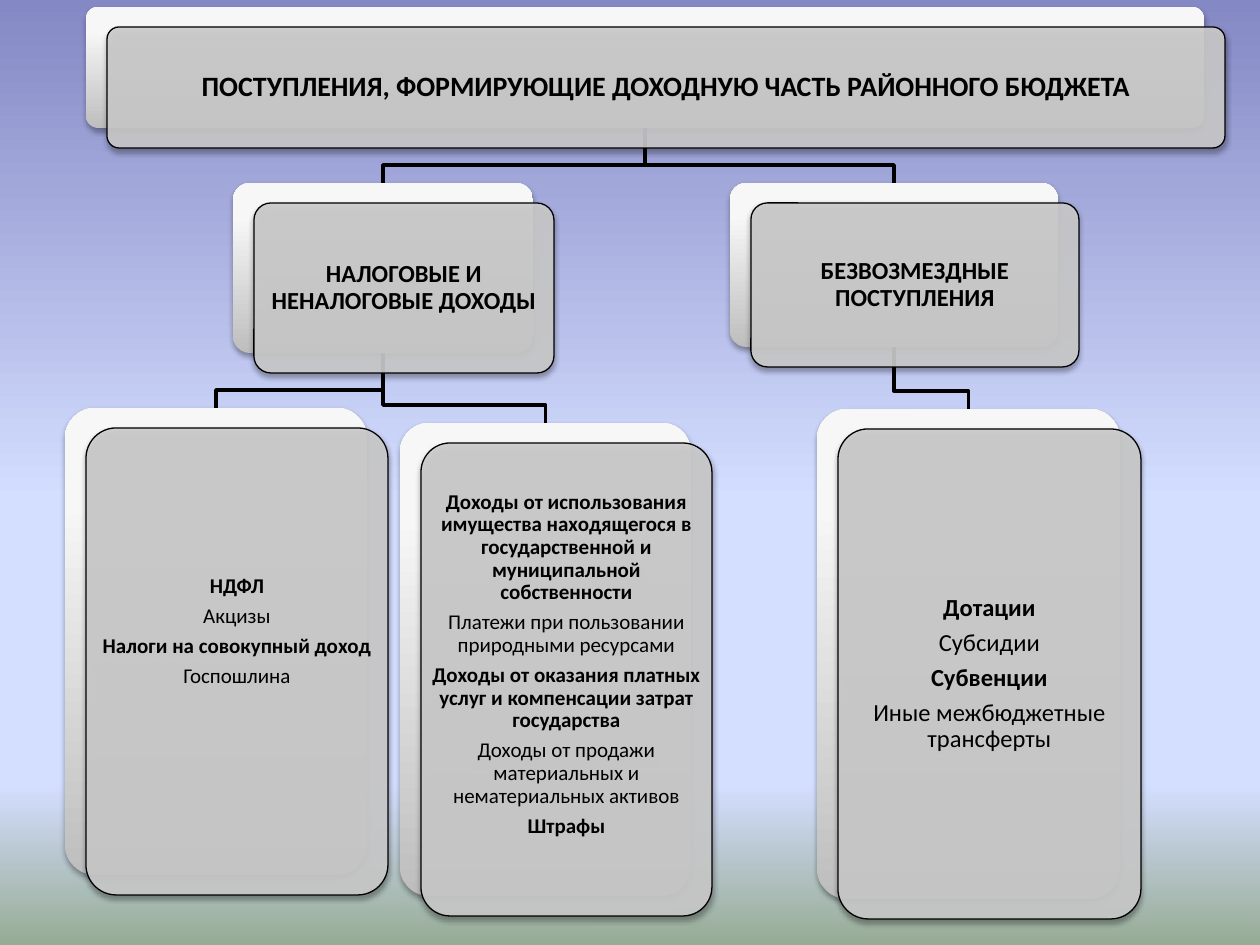
from collections import namedtuple

from lxml import etree
from pptx import Presentation
from pptx.dml.color import RGBColor
from pptx.enum.shapes import MSO_SHAPE
from pptx.enum.text import MSO_ANCHOR, PP_ALIGN
from pptx.oxml.ns import qn
from pptx.util import Emu, Pt

ROUNDED = MSO_SHAPE.ROUNDED_RECTANGLE
MIDDLE = MSO_ANCHOR.MIDDLE
CENTER = PP_ALIGN.CENTER

PX = 914400 / 126
FONT = "Calibri"
OFFSET_X, OFFSET_Y = 21, 20
ELBOW_RISE = 18
COLORS = {
    "ink": "000000",
    "panel": "CCCCCC",
    "plate_low": "BEBEBE",
    "plate_mid": "F7F7F7",
    "plate_high": "F8F8F8",
    "sky_top": "8488C4",
    "sky": "D4DEFF",
    "ground": "96AB94",
}
SKY_STOPS = [(0, "sky_top"), (53, "sky"), (83, "sky"), (100, "ground")]
PLATE_STOPS = [(0, "plate_low"), (80, "plate_mid"), (100, "plate_high")]

Box = namedtuple("Box", "left top width height")
Node = namedtuple("Node", "box size lines children lift", defaults=((), 0))

TAX_LEAF = Node(
    Box(65, 408, 302, 467), 12,
    ["НДФЛ", "Акцизы", "Налоги на совокупный доход", "Госпошлина"], lift=60)
NON_TAX_LEAF = Node(
    Box(400, 423, 291, 473), 12,
    ["Доходы от использования имущества находящегося в государственной и "
     "муниципальной собственности",
     "Платежи при пользовании природными ресурсами",
     "Доходы от оказания платных услуг и компенсации затрат государства",
     "Доходы от продажи материальных и нематериальных активов",
     "Штрафы"], lift=30)
GRANT_LEAF = Node(
    Box(817, 409, 303, 490), 14,
    ["Дотации", "Субсидии", "Субвенции", "Иные межбюджетные трансферты"])
OWN_INCOME = Node(Box(233, 183, 300, 170), 14, ["НАЛОГОВЫЕ И НЕНАЛОГОВЫЕ ДОХОДЫ"],
                  [TAX_LEAF, NON_TAX_LEAF])
GRANTS = Node(Box(730, 183, 328, 164), 14, ["БЕЗВОЗМЕЗДНЫЕ ПОСТУПЛЕНИЯ"], [GRANT_LEAF])
BUDGET = Node(Box(86, 7, 1118, 121), 16,
              ["ПОСТУПЛЕНИЯ, ФОРМИРУЮЩИЕ ДОХОДНУЮ ЧАСТЬ РАЙОННОГО БЮДЖЕТА"],
              [OWN_INCOME, GRANTS])


def px(length):
    return Emu(round(length * PX))


def color(name):
    return RGBColor.from_string(COLORS[name])


def add_color(parent, name, alpha=None):
    element = etree.SubElement(parent, qn("a:srgbClr"), val=COLORS[name])
    if alpha is not None:
        etree.SubElement(element, qn("a:alpha"), val=str(alpha * 1000))


def set_gradient(fill, owner, stops, angle):
    fill.gradient()
    gradient = next(owner.iter(qn("a:gradFill")))
    for child in list(gradient):
        gradient.remove(child)
    stop_list = etree.SubElement(gradient, qn("a:gsLst"))
    for position, name in stops:
        stop = etree.SubElement(stop_list, qn("a:gs"), pos=str(position * 1000))
        add_color(stop, name)
    etree.SubElement(gradient, qn("a:lin"), ang=str(angle * 60000), scaled="0")


def add_shadow(shape):
    shape.shadow.inherit = False
    effects = shape._element.spPr.find(qn("a:effectLst"))
    shadow = etree.SubElement(
        effects, qn("a:outerShdw"), blurRad=str(Pt(3.1)), dist=str(Pt(1.8)),
        dir="5400000", rotWithShape="0")
    add_color(shadow, "ink", alpha=35)


def write_text(shape, lines, size, lift=0):
    frame = shape.text_frame
    frame.word_wrap = True
    frame.vertical_anchor = MIDDLE
    frame.margin_left = frame.margin_right = frame.margin_top = px(1)
    frame.margin_bottom = px(1 + lift)
    for index, line in enumerate(lines):
        para = frame.paragraphs[0] if index == 0 else frame.add_paragraph()
        para.alignment = CENTER
        para.line_spacing = 0.9
        para.space_after = Pt(0.35 * size)
        span = para.add_run()
        span.text = line
        span.font.name = FONT
        span.font.size = Pt(size)
        span.font.bold = index % 2 == 0
        span.font.color.rgb = color("ink")


def add_rounded(page, box):
    shape = page.shapes.add_shape(ROUNDED, *map(px, box))
    shape.adjustments[0] = 0.1
    return shape


def draw_card(page, node):
    plate = add_rounded(page, node.box)
    set_gradient(plate.fill, plate._element, PLATE_STOPS, 270)
    plate.line.fill.background()
    add_shadow(plate)

    left, top, width, height = node.box
    panel = add_rounded(page, Box(left + OFFSET_X, top + OFFSET_Y, width, height))
    panel.fill.solid()
    panel.fill.fore_color.rgb = color("panel")
    fill_color = panel._element.spPr.find(qn("a:solidFill"))[0]
    etree.SubElement(fill_color, qn("a:alpha"), val="90000")
    panel.line.color.rgb = color("ink")
    panel.line.width = Pt(0.75)
    add_shadow(panel)
    write_text(panel, node.lines, node.size, lift=node.lift)


def draw_elbow(page, parent, child):
    start_x, end_x = (box.left + box.width / 2 for box in (parent, child))
    start_y = parent.top + parent.height
    turn_y = child.top - ELBOW_RISE
    points = [(start_x, turn_y), (end_x, turn_y), (end_x, child.top)]
    builder = page.shapes.build_freeform(px(start_x), px(start_y))
    builder.add_line_segments([(px(x), px(y)) for x, y in points], close=False)
    elbow = builder.convert_to_shape()
    elbow.fill.background()
    elbow.line.color.rgb = color("ink")
    elbow.line.width = Pt(2)
    elbow.shadow.inherit = False


def draw_elbows(page, node):
    for child in node.children:
        draw_elbow(page, node.box, child.box)
        draw_elbows(page, child)


def draw_cards(page, node):
    draw_card(page, node)
    for child in node.children:
        draw_cards(page, child)


def main():
    deck = Presentation()
    deck.slide_width, deck.slide_height = px(1260), px(945)
    page = deck.slides.add_slide(deck.slide_layouts[6])
    set_gradient(page.background.fill, page._element, SKY_STOPS, 90)
    draw_elbows(page, BUDGET)
    draw_cards(page, BUDGET)
    deck.save("out.pptx")


if __name__ == "__main__":
    main()
